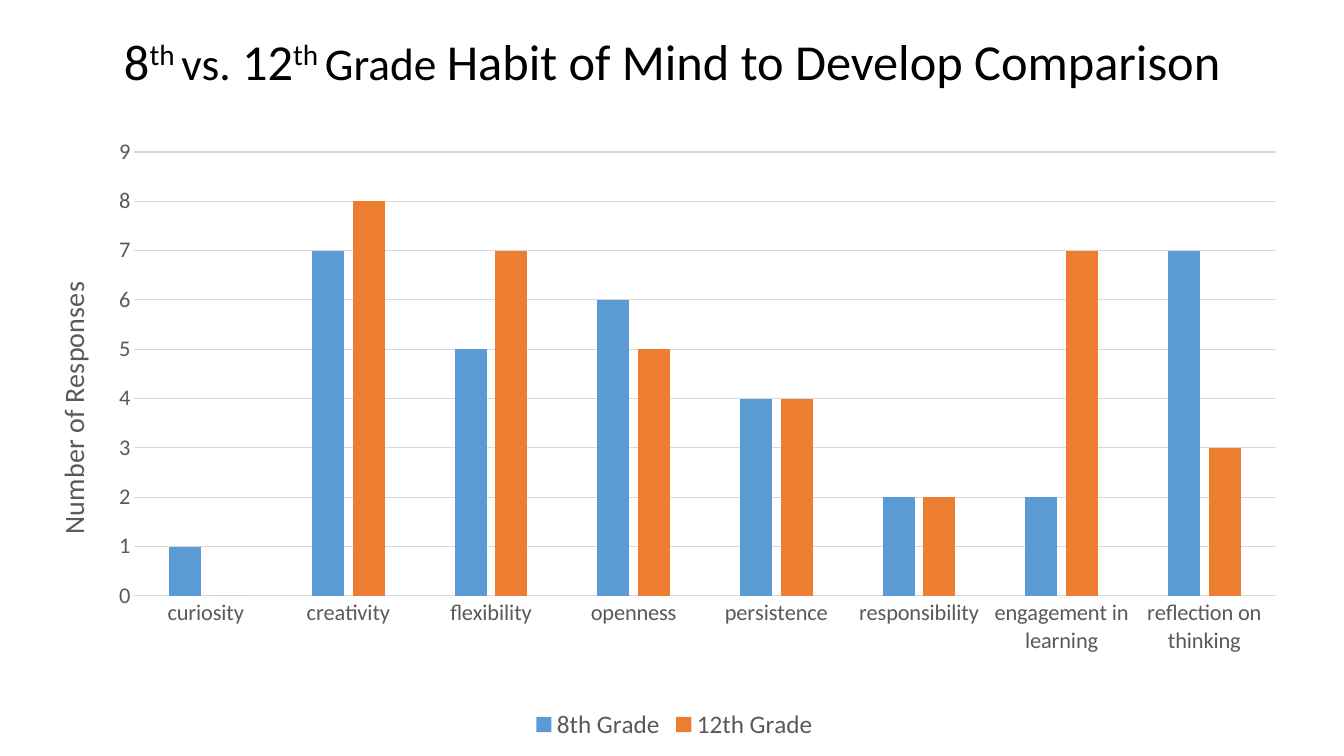
from dataclasses import dataclass

from lxml.etree import SubElement
from pptx import Presentation
from pptx.chart.axis import CategoryAxis, ValueAxis
from pptx.chart.chart import Chart
from pptx.chart.data import CategoryChartData
from pptx.dml.color import RGBColor
from pptx.dml.line import LineFormat
from pptx.enum.chart import XL_CHART_TYPE as ChartType
from pptx.enum.chart import XL_LEGEND_POSITION as LegendPosition
from pptx.enum.chart import XL_TICK_MARK as TickMark
from pptx.enum.text import MSO_ANCHOR as Anchor
from pptx.enum.text import PP_ALIGN as Align
from pptx.oxml.ns import qn
from pptx.slide import Slide
from pptx.text.text import Font
from pptx.util import Cm, Pt

FONT = "Calibri"
COLORS = {
    "title": "000000",
    "label": "595959",
    "grid": "D9D9D9",
    "blue": "5B9BD5",
    "orange": "ED7D31",
}


@dataclass(frozen=True)
class TitlePart:
    text: str
    size: float = 36
    raised: bool = False


@dataclass(frozen=True)
class GradeSeries:
    name: str
    responses: tuple[int, ...]
    color: str


TITLE_PARTS = (
    TitlePart("8"),
    TitlePart("th ", raised=True),
    TitlePart("vs.", 32.4),
    TitlePart(" 12"),
    TitlePart("th ", raised=True),
    TitlePart("Grade ", 32.4),
    TitlePart("Habit of Mind to Develop Comparison"),
)
HABITS = (
    "curiosity", "creativity", "flexibility", "openness", "persistence",
    "responsibility", "engagement in learning", "reflection on thinking",
)
GRADES = (
    GradeSeries("8th Grade", (1, 7, 5, 6, 4, 2, 2, 7), "blue"),
    GradeSeries("12th Grade", (0, 8, 7, 5, 4, 2, 7, 3), "orange"),
)


def style_font(font: Font, size: float, color: str = "label") -> None:
    font.name = FONT
    font.size = Pt(size)
    font.bold = False
    font.color.rgb = RGBColor.from_string(COLORS[color])


def style_line(line: LineFormat) -> None:
    line.color.rgb = RGBColor.from_string(COLORS["grid"])
    line.width = Pt(0.75)


def style_axis(axis: CategoryAxis | ValueAxis) -> None:
    axis.major_tick_mark = axis.minor_tick_mark = TickMark.NONE
    style_font(axis.tick_labels.font, 16)


def place_by_fraction(parent, **settings: str | float) -> None:
    """Give a chart part a manual layout, in fractions of the chart's size."""
    layout = parent.find(qn("c:layout"))
    if layout is None:
        layout = SubElement(parent, qn("c:layout"))
        text = parent.find(qn("c:tx"))
        parent.insert(0 if text is None else 1, layout)
    manual = SubElement(layout, qn("c:manualLayout"))
    for name, value in settings.items():
        SubElement(manual, qn(f"c:{name}")).set("val", str(value))


def add_title(page: Slide) -> None:
    box = page.shapes.add_textbox(Cm(2.34), Cm(0.46), Cm(29.21), Cm(2.31))
    frame = box.text_frame
    frame.word_wrap = True
    frame.vertical_anchor = Anchor.MIDDLE
    para = frame.paragraphs[0]
    para.alignment = Align.CENTER
    para.line_spacing = 0.9
    for part in TITLE_PARTS:
        span = para.add_run()
        span.text = part.text
        style_font(span.font, part.size, "title")
        if part.raised:
            span._r.get_or_add_rPr().set("baseline", "30000")


def style_axes(chart: Chart) -> None:
    style_axis(chart.category_axis)
    style_line(chart.category_axis.format.line)

    counts = chart.value_axis
    style_axis(counts)
    counts.minimum_scale, counts.maximum_scale, counts.major_unit = 0, 9, 1
    counts.format.line.fill.background()
    style_line(counts.major_gridlines.format.line)
    para = counts.axis_title.text_frame.paragraphs[0]
    span = para.add_run()
    span.text = "Number of Responses"
    style_font(span.font, 20)
    place_by_fraction(counts.axis_title._element,
                      xMode="edge", yMode="edge", x=0.02, y=0.28)


def add_response_chart(page: Slide) -> None:
    data = CategoryChartData(number_format="General")
    data.categories = HABITS
    for grade in GRADES:
        data.add_series(grade.name, grade.responses)
    chart = page.shapes.add_chart(
        ChartType.COLUMN_CLUSTERED,
        Cm(0.56), Cm(2.39), Cm(32.87), Cm(16.38), data).chart
    chart.has_title = False
    style_font(chart.font, 10, "title")
    style_axes(chart)

    plot = chart.plots[0]
    plot.vary_by_categories = False
    plot.gap_width = 219
    plot.overlap = -27
    for series, grade in zip(plot.series, GRADES):
        series.format.fill.solid()
        series.format.fill.fore_color.rgb = RGBColor.from_string(
            COLORS[grade.color])

    chart.has_legend = True
    chart.legend.position = LegendPosition.BOTTOM
    chart.legend.include_in_layout = False
    style_font(chart.legend.font, 18)
    place_by_fraction(chart._chartSpace.chart.plotArea,
                      layoutTarget="inner", xMode="edge", yMode="edge",
                      x=0.086, y=0.088, w=0.875, h=0.683)


def main() -> None:
    deck = Presentation()
    deck.slide_width, deck.slide_height = Cm(33.87), Cm(19.05)
    page = deck.slides.add_slide(deck.slide_layouts[6])
    add_title(page)
    add_response_chart(page)
    deck.save("out.pptx")


if __name__ == "__main__":
    main()
